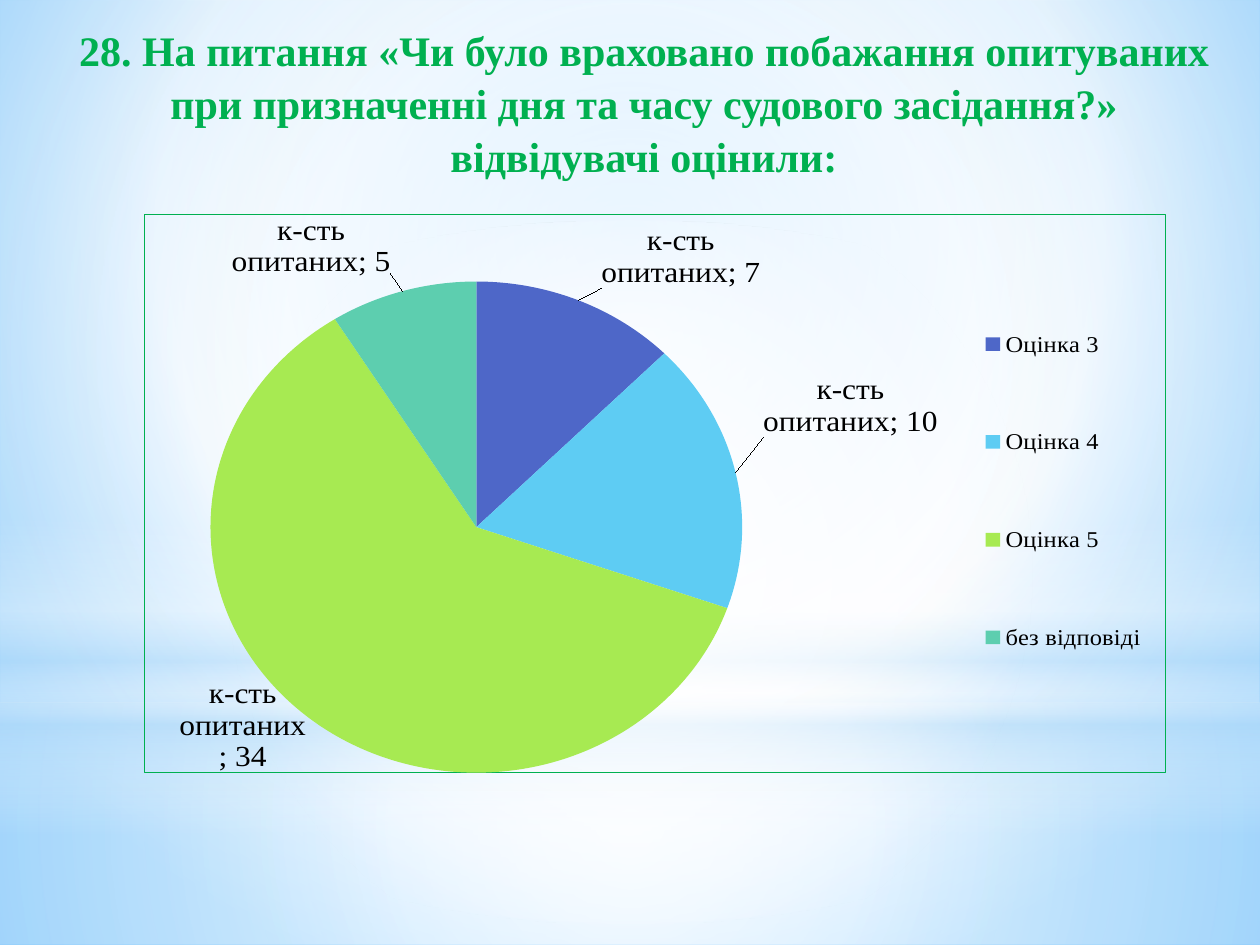
from copy import deepcopy

from lxml import etree
from pptx import Presentation
from pptx.chart.data import CategoryChartData
from pptx.dml.color import RGBColor
from pptx.enum.chart import XL_CHART_TYPE, XL_LABEL_POSITION, XL_LEGEND_POSITION
from pptx.enum.shapes import MSO_SHAPE
from pptx.enum.text import MSO_ANCHOR, MSO_AUTO_SIZE, PP_ALIGN
from pptx.oxml import parse_xml
from pptx.oxml.ns import nsdecls, qn
from pptx.util import Pt

PIE = XL_CHART_TYPE.PIE
OUT_END = XL_LABEL_POSITION.OUTSIDE_END
RIGHT = XL_LEGEND_POSITION.RIGHT
RECT, OVAL = MSO_SHAPE.RECTANGLE, MSO_SHAPE.OVAL
TOP, CENTER, NO_FIT = MSO_ANCHOR.TOP, PP_ALIGN.CENTER, MSO_AUTO_SIZE.NONE

GREEN = RGBColor(0x00, 0xB0, 0x50)
BLACK = RGBColor(0x00, 0x00, 0x00)
WHITE = RGBColor(0xFF, 0xFF, 0xFF)
SKY = RGBColor(0xB4, 0xDC, 0xFA)
PALE = RGBColor(0x9E, 0xD5, 0xFF)
DEEP = RGBColor(0x5B, 0xB9, 0xFF)
SLICES = [
    RGBColor(0x4E, 0x67, 0xC8),
    RGBColor(0x5E, 0xCC, 0xF3),
    RGBColor(0xA7, 0xEA, 0x52),
    RGBColor(0x5D, 0xCE, 0xAF),
]
SERIF = "Times New Roman"
TITLE = (
    "28. На питання «Чи було враховано побажання опитуваних "
    "при призначенні дня та часу судового засідання?» відвідувачі оцінили:"
)
SCORES = {"Оцінка 3": 7, "Оцінка 4": 10, "Оцінка 5": 34, "без відповіді": 5}
SHIFTS = {0: (0.02, -0.01), 1: (0.02, -0.06), 3: (-0.01, -0.02)}
MID = (50, 50, 50, 50)
GLOWS = [
    (RECT, (0, 703, 1260, 242),
     [(0, WHITE, 91), (37, WHITE, 76), (100, SKY, 79)], MID),
    (RECT, (0, 0, 1260, 703),
     [(0, WHITE, 89), (48, WHITE, 62), (100, SKY, 79)], MID),
    (RECT, (0, 519, 1260, 315),
     [(0, WHITE, 0), (29, WHITE, 30), (45, SKY, 40),
      (55, WHITE, 26), (65, SKY, 60), (100, WHITE, 0)], None),
    (OVAL, (0, 221, 1260, 703), [(0, WHITE, 100), (56, WHITE, 0)], MID),
]


def px(n):
    """Turn pixels into EMU."""
    return round(n * 914400 / 126)


def blend(owner, stops, focus):
    """Swap the solid fill of an element for a gradient."""
    marks = "".join(
        f'<a:gs pos="{at * 1000}"><a:srgbClr val="{tone}">'
        f'<a:alpha val="{alpha * 1000}"/></a:srgbClr></a:gs>'
        for at, tone, alpha in stops
    )
    if focus:
        left, top, right, base = (n * 1000 for n in focus)
        way = (f'<a:path path="circle"><a:fillToRect l="{left}" t="{top}" '
               f'r="{right}" b="{base}"/></a:path>')
    else:
        way = '<a:lin ang="5400000" scaled="0"/>'
    grad = parse_xml(f'<a:gradFill {nsdecls("a")} rotWithShape="1">'
                     f'<a:gsLst>{marks}</a:gsLst>{way}</a:gradFill>')
    solid = owner.find(qn("a:solidFill"))
    solid.getparent().replace(solid, grad)


def layout(**parts):
    """Make a manual chart layout."""
    items = "".join(f'<c:{key} val="{val}"/>' for key, val in parts.items())
    return parse_xml(f'<c:layout {nsdecls("c")}><c:manualLayout>{items}'
                     '</c:manualLayout></c:layout>')


def add_back(slide):
    """Paint the background and its soft glows."""
    slide.background.fill.solid()
    page = next(slide.element.iter(qn("p:bgPr")))
    blend(page, [(0, PALE, 100), (60, WHITE, 100), (100, DEEP, 100)],
          (20, 10, 20, 60))
    for kind, box, stops, focus in GLOWS:
        glow = slide.shapes.add_shape(kind, *map(px, box))
        glow.shadow.inherit = False
        glow.line.fill.background()
        glow.fill.solid()
        blend(glow.element.spPr, stops, focus)


def add_title(slide, box):
    """Place the question in the title placeholder."""
    title = slide.shapes.title
    title.left, title.top, title.width, title.height = map(px, box)
    slide.shapes.element.append(title.element)
    frame = title.text_frame
    frame.text = TITLE
    frame.word_wrap = True
    frame.auto_size = NO_FIT
    frame.vertical_anchor = TOP
    frame.margin_left = frame.margin_right = px(8)
    para = frame.paragraphs[0]
    para.alignment = CENTER
    para.line_spacing = 1.05
    font = para.font
    font.name, font.size, font.bold = SERIF, Pt(24), True
    font.color.rgb = GREEN


def add_labels(series):
    """Label the slices with series name and value."""
    labels = series.data_labels
    labels.show_value = labels.show_series_name = True
    labels.position = OUT_END
    labels.font.name, labels.font.size = SERIF, Pt(18)
    labels.font.color.rgb = BLACK
    root = series.data_labels._element
    gap = etree.Element(qn("c:separator"))
    gap.text = "; "
    root.find(qn("c:showBubbleSize")).addnext(gap)
    parts = [el for el in root if el.tag != qn("c:showLeaderLines")]
    for spot, (idx, (x, y)) in enumerate(SHIFTS.items()):
        label = parse_xml(f'<c:dLbl {nsdecls("c")}><c:idx val="{idx}"/></c:dLbl>')
        label.append(layout(x=x, y=y))
        label.extend(deepcopy(parts))
        root.insert(spot, label)


def add_pie(slide, box):
    """Chart the scores as a framed pie with a legend."""
    data = CategoryChartData()
    data.categories = list(SCORES)
    data.add_series("к-сть опитаних", list(SCORES.values()))
    chart = slide.shapes.add_chart(PIE, *map(px, box), data).chart
    chart.has_title = False
    chart.font.name, chart.font.size = "Lato", Pt(18)
    chart.font.color.rgb = BLACK
    plot = chart.plots[0]
    plot.vary_by_categories = True
    series = plot.series[0]
    for idx, tone in enumerate(SLICES):
        fill = series.points[idx].format.fill
        fill.solid()
        fill.fore_color.rgb = tone
    add_labels(series)

    chart.has_legend = True
    legend = chart.legend
    legend.position = RIGHT
    legend.include_in_layout = False
    legend.font.name, legend.font.size = SERIF, Pt(14)
    legend.font.color.rgb = BLACK
    root = legend._element
    for old in root.findall(qn("c:layout")):
        root.remove(old)
    root.find(qn("c:legendPos")).addnext(
        layout(xMode="edge", yMode="edge", x=0.82, y=0.08, w=0.16, h=0.83))

    area = next(chart.element.iter(qn("c:plotArea")))
    for old in area.findall(qn("c:layout")):
        area.remove(old)
    area.insert(0, layout(layoutTarget="inner", xMode="edge", yMode="edge",
                          x=0, y=0.12, w=0.65, h=0.88))
    chart.element.find(qn("c:chart")).addnext(parse_xml(
        f'<c:spPr {nsdecls("c", "a")}><a:noFill/><a:ln w="{Pt(0.75)}">'
        f'<a:solidFill><a:srgbClr val="{GREEN}"/></a:solidFill></a:ln></c:spPr>'))


def main():
    """Build the slide and save it."""
    deck = Presentation()
    deck.slide_width, deck.slide_height = px(1260), px(945)
    slide = deck.slides.add_slide(deck.slide_layouts[5])
    add_back(slide)
    add_title(slide, (64, 16, 1160, 159))
    add_pie(slide, (144, 214, 1022, 605))
    deck.save("out.pptx")


if __name__ == "__main__":
    main()
